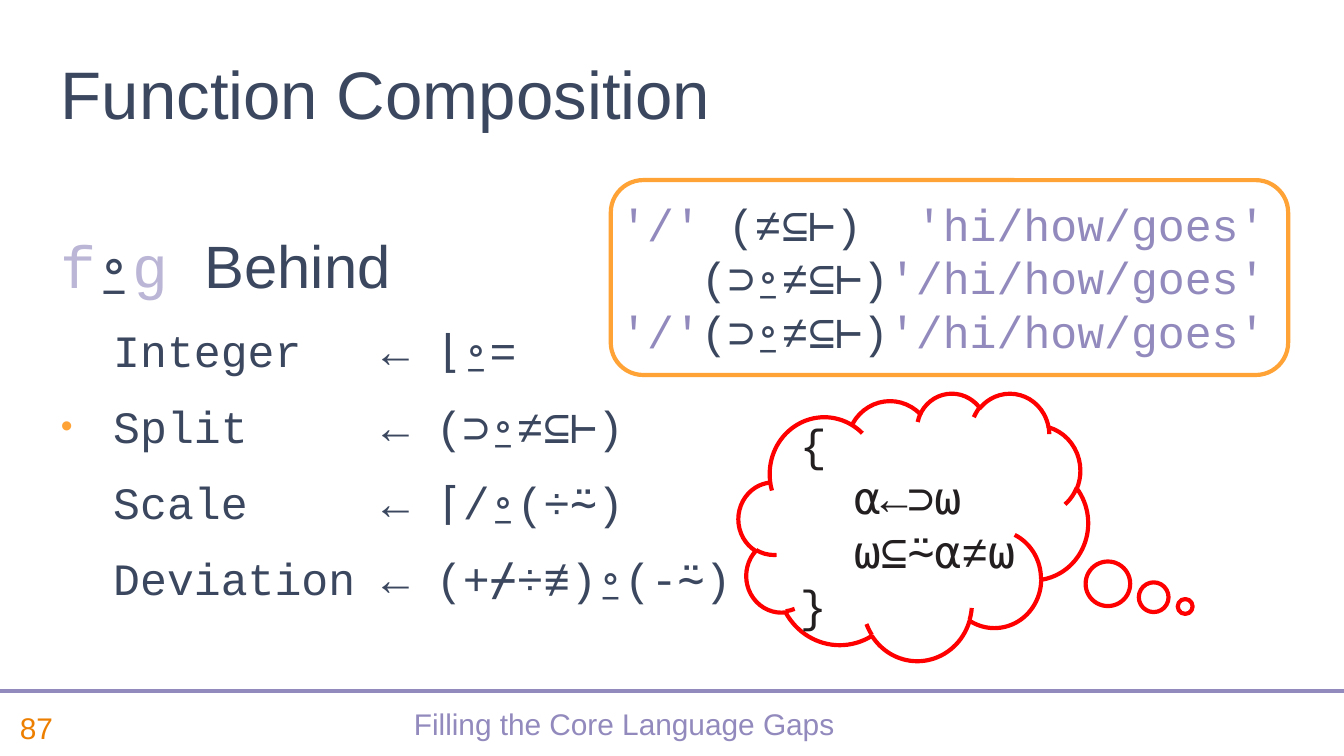
from lxml.etree import SubElement
from pptx import Presentation
from pptx.dml.color import RGBColor as RGB
from pptx.enum.shapes import MSO_CONNECTOR as LINE, MSO_SHAPE as SHAPE
from pptx.enum.text import MSO_ANCHOR as ANCHOR, PP_ALIGN as ALIGN
from pptx.oxml.ns import qn
from pptx.util import Inches, Pt

NAVY = RGB(0x3B, 0x47, 0x5E)
VIOLET = RGB(0x92, 0x8A, 0xBD)
PALE = RGB(0xBB, 0xB5, 0xD6)
ORANGE = RGB(0xED, 0x7F, 0x00)
AMBER = RGB(0xFF, 0xA3, 0x36)
RED = RGB(0xFF, 0x00, 0x00)
INK = RGB(0x23, 0x1F, 0x20)
WHITE = RGB(0xFF, 0xFF, 0xFF)
SANS, MONO = "Arial", "Courier New"

WIDE = Inches(10)
HIGH = WIDE * 9 // 16
COL, ROW = WIDE / 100, HIGH / 56.25


def place(box):
    x, y, w, h = box
    return int(x * COL), int(y * ROW), int(w * COL), int(h * ROW)


def write(para, text, size, color, face=SANS):
    run = para.add_run()
    run.text = text
    font = run.font
    font.name, font.size, font.color.rgb = face, Pt(size), color


def frame(slide, box, anchor=ANCHOR.TOP):
    text = slide.shapes.add_textbox(*place(box)).text_frame
    text.word_wrap = True
    text.vertical_anchor = anchor
    return text


def outline(slide, kind, box, color):
    shape = slide.shapes.add_shape(kind, *place(box))
    shape.shadow.inherit = False
    shape.line.color.rgb = color
    shape.line.width = Pt(2.25)
    shape.text_frame.word_wrap = True
    return shape


def indent(para, bullet):
    """Hang the paragraph, with an amber dot if asked for."""
    props = para._p.get_or_add_pPr()
    props.set("marL", str(Inches(0.39)))
    props.set("indent", str(-Inches(0.39) if bullet else 0))
    if bullet:
        tint = SubElement(props, qn("a:buClr"))
        SubElement(tint, qn("a:srgbClr"), val=str(AMBER))
        SubElement(props, qn("a:buSzPct"), val="75000")
        SubElement(props, qn("a:buFont"), typeface=SANS)
        SubElement(props, qn("a:buChar"), char="•")
    else:
        SubElement(props, qn("a:buNone"))


def footer(slide, box):
    x, y, w, h = box
    rule = slide.shapes.add_connector(LINE.STRAIGHT, *place((x, y, x + w, y)))
    rule.line.color.rgb = VIOLET
    rule.line.width = Pt(2.25)
    SubElement(rule._element.spPr, qn("a:effectLst"))
    top, tall, side = y + 0.5, h - 0.4, 7.8
    page = frame(slide, (x + 0.5, top, side - 0.5, tall), ANCHOR.MIDDLE)
    write(page.paragraphs[0], "87", 16, ORANGE)
    name = frame(slide, (x + side, top, 77.3, tall), ANCHOR.MIDDLE).paragraphs[0]
    name.alignment = ALIGN.CENTER
    name.line_spacing = 0.8
    write(name, "Filling the Core Language Gaps", 16, VIOLET)


def title(slide, box):
    text = frame(slide, box, ANCHOR.BOTTOM)
    write(text.paragraphs[0], "Function Composition", 36, NAVY)


def body(slide, box):
    text = frame(slide, box)
    head = text.paragraphs[0]
    head.line_spacing = 1.5
    head.space_after = Pt(12)
    for part, color, face in (("f", PALE, MONO), ("⍛", NAVY, MONO),
                              ("g ", PALE, MONO), ("Behind", NAVY, SANS)):
        write(head, part, 32, color, face)
    for name, code in (("Integer", "⌊⍛="), ("Split", "(⊃⍛≠⊆⊢)"),
                       ("Scale", "⌈/⍛(÷⍨)"), ("Deviation", "(+⌿÷≢)⍛(-⍨)")):
        para = text.add_paragraph()
        indent(para, name == "Split")
        para.space_after = Pt(12)
        write(para, f"{name:<9} ← {code}", 24, NAVY, MONO)


def sample(slide, box):
    shape = outline(slide, SHAPE.ROUNDED_RECTANGLE, box, AMBER)
    shape.fill.background()
    text = shape.text_frame
    text.margin_left = text.margin_right = 0
    text.vertical_anchor = ANCHOR.TOP
    first, last = text.paragraphs[0], text.add_paragraph()
    first.alignment = last.alignment = ALIGN.LEFT
    for para, call in ((first, ("'/' ", "(≠⊆⊢)  ", "'hi/how/goes'")),
                       (first, ("   ", "(⊃⍛≠⊆⊢)", "'/hi/how/goes'")),
                       (last, ("'/'", "(⊃⍛≠⊆⊢)", "'/hi/how/goes'"))):
        if para.runs:
            para.add_line_break()
        for part, color in zip(call, (VIOLET, NAVY, VIOLET)):
            write(para, part, 24, color, MONO)


def cloud(slide, box):
    shape = outline(slide, SHAPE.CLOUD_CALLOUT, box, RED)
    shape.adjustments[0], shape.adjustments[1] = 0.778, 0.299
    shape.fill.solid()
    shape.fill.fore_color.rgb = WHITE
    text = shape.text_frame
    text.margin_top, text.margin_right = Inches(0.1), 0
    text.vertical_anchor = ANCHOR.MIDDLE
    para = text.paragraphs[0]
    para.alignment = ALIGN.LEFT
    for code in ("{", "  ⍺←⊃⍵", "  ⍵⊆⍨⍺≠⍵", "}"):
        if para.runs:
            para.add_line_break()
        write(para, code, 24, INK, MONO)


def main():
    deck = Presentation()
    deck.slide_width, deck.slide_height = WIDE, HIGH
    slide = deck.slides.add_slide(deck.slide_layouts[6])
    footer(slide, (0, 51.4, 100, 4.8))
    body(slide, (3.54, 13.84, 96.46, 39.5))
    title(slide, (3.54, 2.9, 76.6, 7.5))
    sample(slide, (45.45, 13.4, 50.4, 14.5))
    cloud(slide, (54.96, 29.23, 26, 19.9))
    deck.save("out.pptx")


if __name__ == "__main__":
    main()
